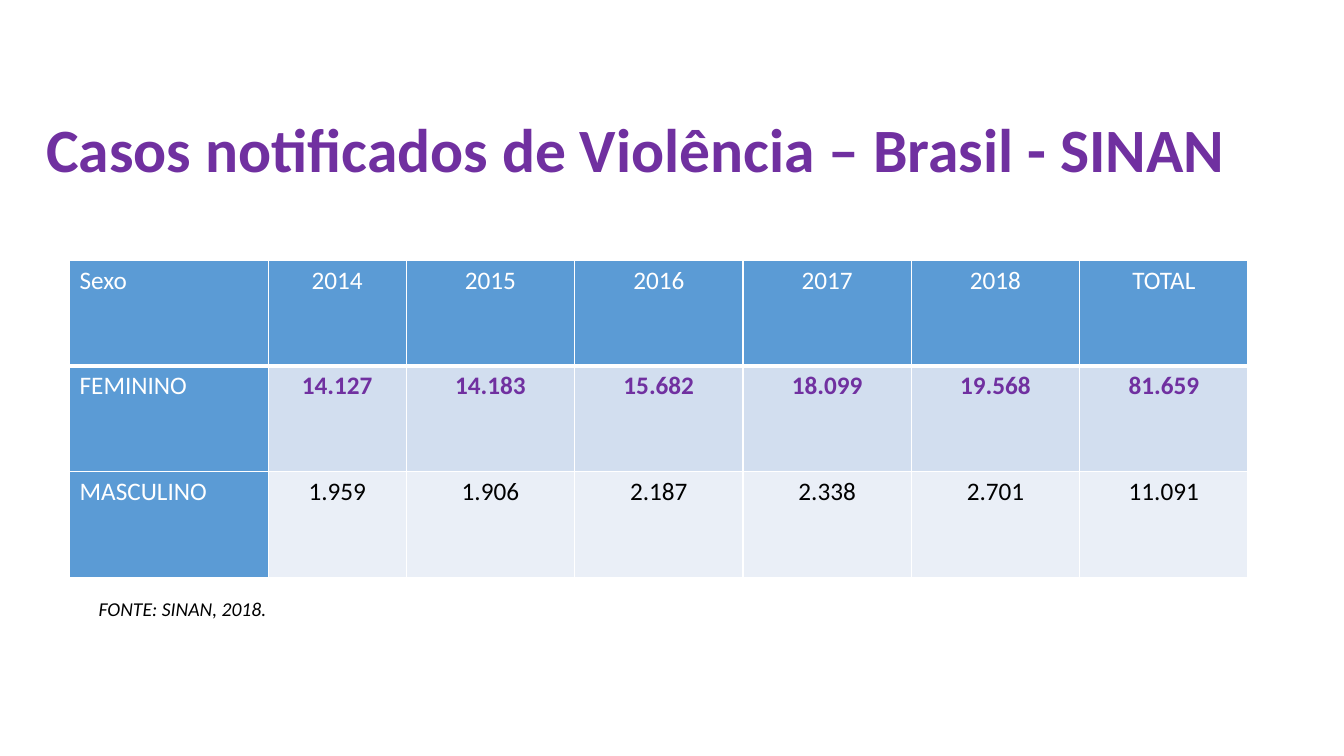
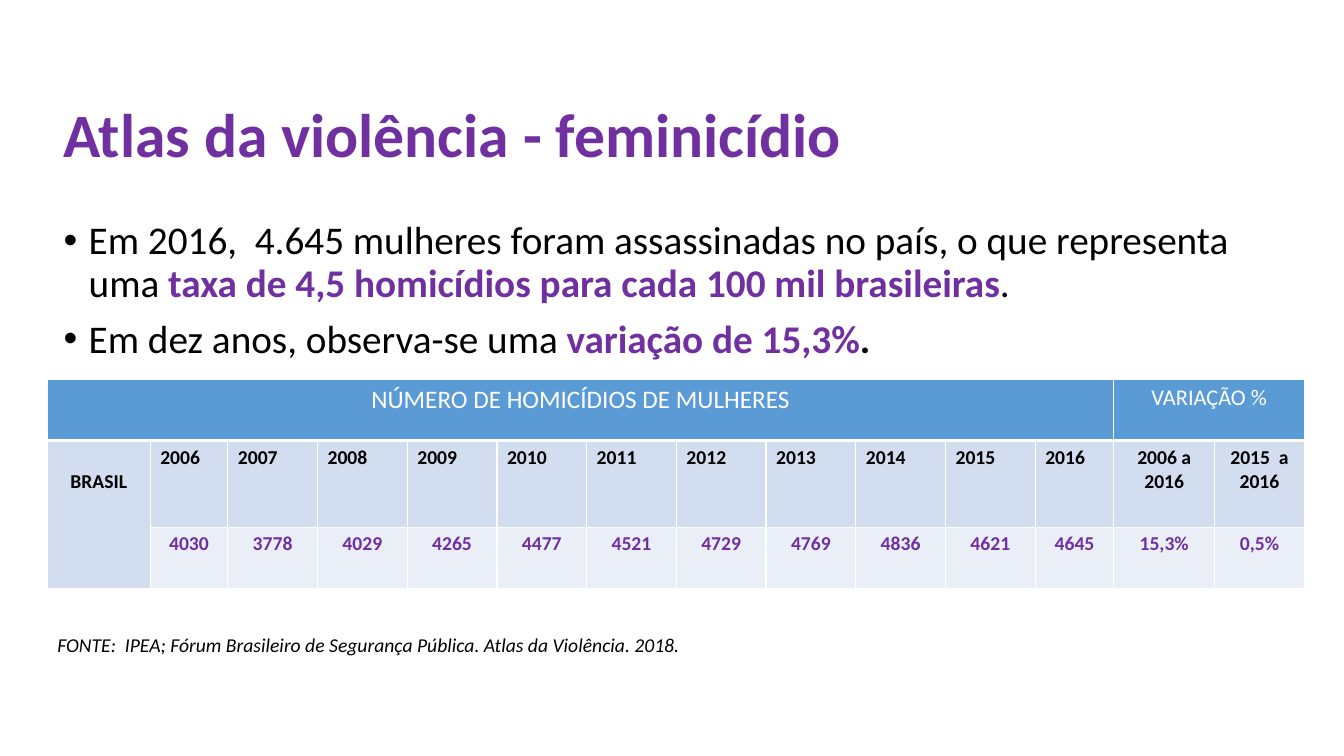
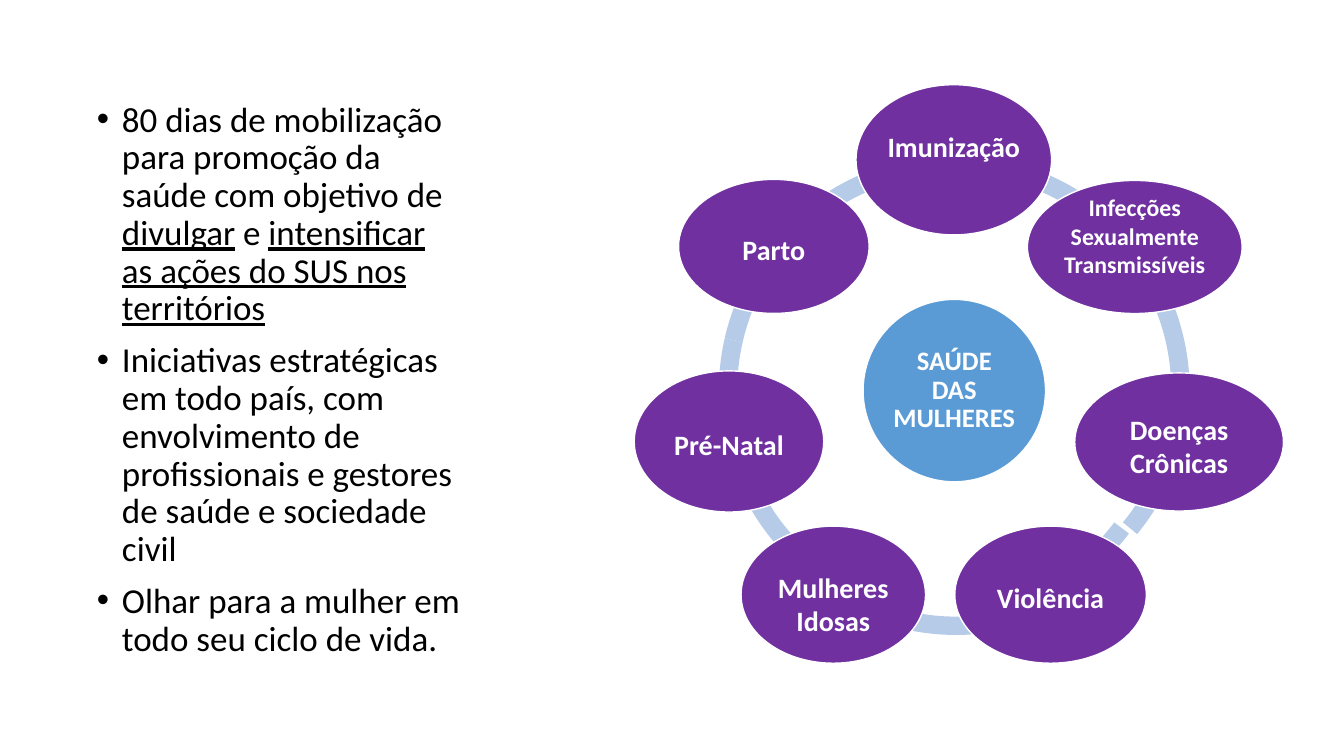
import pptx
import pptx.util
import pptx.dml.color
import pptx.enum.shapes
import pptx.enum.text
import pptx.oxml
import pptx.oxml.ns

RGBColor = pptx.dml.color.RGBColor
PURPLE = RGBColor(0x70, 0x30, 0xA0)
BLUE = RGBColor(0x5B, 0x9B, 0xD5)
ARC_BLUE = RGBColor(0xB5, 0xCB, 0xE7)
BAND_DARK = RGBColor(0xD2, 0xDE, 0xEF)
BAND_LIGHT = RGBColor(0xEA, 0xEF, 0xF7)
WHITE = RGBColor(0xFF, 0xFF, 0xFF)
BLACK = RGBColor(0x00, 0x00, 0x00)

FONT = "Calibri"
EMU_PER_PX = 9144
CONTENT_LAYOUT, TITLE_LAYOUT = 1, 5
LEFT = pptx.enum.text.PP_ALIGN.LEFT
CENTER = pptx.enum.text.PP_ALIGN.CENTER
JUSTIFY = pptx.enum.text.PP_ALIGN.JUSTIFY
TOP = pptx.enum.text.MSO_ANCHOR.TOP
MIDDLE = pptx.enum.text.MSO_ANCHOR.MIDDLE
SHAPES = pptx.enum.shapes.MSO_SHAPE

ARC_SIZE = 467
ARC_THICKNESS = 0.039
DEGREE = 0.6
ARCS = [
    (84, 70, 131.14, 162),
    (84, 70, 100.29, 131.14),
    (86, 79, 73.4, 101.68),
    (71, 71, 37.1, 70.9),
    (85, 64, 8.67, 39.44),
    (84, 70, 192.86, 7.71),
    (84, 70, 162, 192.86),
]
PETALS = [
    ("Imunização", (220, 0, 194, 149), 20, 0, 26),
    ("Infecções Sexualmente Transmissíveis", (390, 95, 213, 132), 17, 0, 22),
    ("Doenças Crônicas", (437, 286, 207, 137), 20, 8, 0),
    ("Violência", (318, 438, 190, 136), 20, 6, 0),
    ("Mulheres Idosas", (106, 438, 183, 136), 20, 18, 0),
    ("Pré-Natal", (0, 284, 188, 140), 20, 6, 0),
    ("Parto", (44, 94, 189, 133), 20, 6, 0),
]


def px(value):
    return pptx.util.Emu(value * EMU_PER_PX)


def place(shape, box):
    shape.left, shape.top, shape.width, shape.height = map(px, box)


def set_font(font, size, color, bold=False, italic=False):
    font.name = FONT
    font.size = pptx.util.Pt(size)
    font.color.rgb = color
    font.bold = bold
    font.italic = italic


def prepare_frame(frame):
    frame.word_wrap = True
    frame.auto_size = pptx.enum.text.MSO_AUTO_SIZE.NONE
    frame.vertical_anchor = TOP


def add_title(slide, box, text):
    title = slide.shapes.title
    place(title, box)
    prepare_frame(title.text_frame)
    title.text_frame.text = text
    paragraph = title.text_frame.paragraphs[0]
    paragraph.alignment = LEFT
    paragraph.line_spacing = 0.9
    set_font(paragraph.font, 44, PURPLE, bold=True)


def add_bullets(slide, box, size, items):
    body = slide.placeholders[1]
    place(body, box)
    frame = body.text_frame
    prepare_frame(frame)
    for index, runs in enumerate(items):
        paragraph = frame.add_paragraph() if index else frame.paragraphs[0]
        properties = paragraph._p.get_or_add_pPr()
        properties.set("marL", str(px(25)))
        properties.set("indent", str(px(-25)))
        paragraph.line_spacing = 0.9
        paragraph.space_before = pptx.util.Pt(10 if index else 0)
        set_font(paragraph.font, size, BLACK)
        for text, emphasis in runs:
            run = paragraph.add_run()
            run.text = text
            if "bold" in emphasis:
                run.font.bold = True
            if "purple" in emphasis:
                run.font.color.rgb = PURPLE
            if "underline" in emphasis:
                run.font.underline = True


def add_source(slide, box, text, alignment=LEFT):
    source = slide.shapes.add_textbox(*map(px, box))
    source.text_frame.word_wrap = True
    source.text_frame.text = text
    paragraph = source.text_frame.paragraphs[0]
    paragraph.alignment = alignment
    set_font(paragraph.font, 14, BLACK, italic=True)


def add_grid(slide, left, top, widths, heights):
    frame = slide.shapes.add_table(
        len(heights), len(widths), px(left), px(top), px(sum(widths)), px(sum(heights)))
    table = frame.table
    for column, width in zip(table.columns, widths):
        column.width = px(width)
    for row, height in zip(table.rows, heights):
        row.height = px(height)
    return table


def style_cell(cell, fill, bottom=1):
    properties = cell._tc.get_or_add_tcPr()
    for side, width in (("L", 1), ("R", 1), ("T", 1), ("B", bottom)):
        properties.append(pptx.oxml.parse_xml(
            f'<a:ln{side} {pptx.oxml.ns.nsdecls("a")} w="{pptx.util.Pt(width)}">'
            f'<a:solidFill><a:srgbClr val="{WHITE}"/></a:solidFill></a:ln{side}>'))
    cell.fill.solid()
    cell.fill.fore_color.rgb = fill


def write_cell(cell, text, size, color, bold=False, alignment=CENTER):
    cell.text = text
    paragraph = cell.text_frame.paragraphs[0]
    paragraph.alignment = alignment
    set_font(paragraph.font, size, color, bold)


def add_cases_table(slide, left, top):
    rows = [
        ("Sexo", "2014", "2015", "2016", "2017", "2018", "TOTAL"),
        ("FEMININO", "14.127", "14.183", "15.682", "18.099", "19.568", "81.659"),
        ("MASCULINO", "1.959", "1.906", "2.187", "2.338", "2.701", "11.091"),
    ]
    styles = [(BLUE, WHITE, False), (BAND_DARK, PURPLE, True), (BAND_LIGHT, BLACK, False)]
    table = add_grid(slide, left, top, [197, 137] + [167] * 5, [105] * 3)
    for row, (texts, (fill, color, bold)) in enumerate(zip(rows, styles)):
        for column, text in enumerate(texts):
            cell = table.cell(row, column)
            style_cell(cell, fill if column else BLUE, 1 if row else 3)
            if column:
                write_cell(cell, text, 18, color, bold)
            else:
                write_cell(cell, text, 18, WHITE, alignment=LEFT)


def add_homicides_table(slide, left, top):
    years = [str(year) for year in range(2006, 2017)]
    periods = ["2006 a 2016", "2015  a 2016"]
    values = ["4030", "3778", "4029", "4265", "4477", "4521", "4729", "4769",
              "4836", "4621", "4645", "15,3%", "0,5%"]
    widths = [102, 77] + [89] * 9 + [78, 100, 89]
    table = add_grid(slide, left, top, widths, [61, 86, 61])
    for row, fill in enumerate((BLUE, BAND_DARK, BAND_LIGHT)):
        for column in range(len(widths)):
            style_cell(table.cell(row, column), fill, 1 if row else 3)
    table.cell(0, 0).merge(table.cell(0, 11))
    table.cell(0, 12).merge(table.cell(0, 13))
    table.cell(1, 0).merge(table.cell(2, 0))
    write_cell(table.cell(0, 0), "NÚMERO DE HOMICÍDIOS DE MULHERES", 18, WHITE)
    write_cell(table.cell(0, 12), "VARIAÇÃO %", 16, WHITE)
    country = table.cell(1, 0)
    write_cell(country, "BRASIL", 14, BLACK, bold=True)
    country.margin_top = px(29)
    for column, (heading, value) in enumerate(zip(years + periods, values), start=1):
        alignment = CENTER if heading in periods else LEFT
        write_cell(table.cell(1, column), heading, 14, BLACK, True, alignment)
        write_cell(table.cell(2, column), value, 14, PURPLE, True)


def add_filled(slide, kind, box, fill):
    shape = slide.shapes.add_shape(kind, *map(px, box))
    shape.shadow.inherit = False
    shape.fill.solid()
    shape.fill.fore_color.rgb = fill
    shape.line.fill.background()
    return shape


def add_ellipse(slide, box, fill, text, size, insets, line_spacing=1.0):
    ellipse = add_filled(slide, SHAPES.OVAL, box, fill)
    ellipse.line.color.rgb = WHITE
    ellipse.line.width = pptx.util.Pt(1)
    frame = ellipse.text_frame
    prepare_frame(frame)
    frame.vertical_anchor = MIDDLE
    side, above, below = insets
    frame.margin_left = frame.margin_right = px(side)
    frame.margin_top, frame.margin_bottom = px(above), px(below)
    frame.text = text
    paragraph = frame.paragraphs[0]
    paragraph.alignment = CENTER
    paragraph.line_spacing = line_spacing
    set_font(paragraph.font, size, WHITE, bold=True)


def add_health_cycle(slide, left, top):
    for x, y, start, end in ARCS:
        arc = add_filled(slide, SHAPES.BLOCK_ARC,
                         (left + x, top + y, ARC_SIZE, ARC_SIZE), ARC_BLUE)
        arc.adjustments[0] = start * DEGREE
        arc.adjustments[1] = end * DEGREE
        arc.adjustments[2] = ARC_THICKNESS
    add_ellipse(slide, (left + 227, top + 213, 181, 181), BLUE,
                "SAÚDE DAS MULHERES", 19, (3, 3, 3), 0.9)
    for text, (x, y, width, height), size, above, below in PETALS:
        add_ellipse(slide, (left + x, top + y, width, height), PURPLE,
                    text, size, (0, above, below))


def add_slide(presentation, layout):
    return presentation.slides.add_slide(presentation.slide_layouts[layout])


def build_cases_slide(presentation):
    slide = add_slide(presentation, TITLE_LAYOUT)
    add_title(slide, (36, 113, 1232, 145), "Casos notificados de Violência – Brasil - SINAN")
    add_cases_table(slide, 69, 258)
    add_source(slide, (88, 587, 507, 34), "FONTE: SINAN, 2018.")


def build_atlas_slide(presentation):
    slide = add_slide(presentation, CONTENT_LAYOUT)
    add_title(slide, (53, 98, 1206, 111), "Atlas da violência - feminicídio")
    add_bullets(slide, (53, 214, 1206, 160), 28, [
        [("Em 2016,  4.645 mulheres foram assassinadas no país, o que representa uma ", ()),
         ("taxa de 4,5 homicídios para cada 100 mil brasileiras", ("bold", "purple")),
         (".", ())],
        [("Em dez anos, observa-se uma ", ()),
         ("variação de 15,3%", ("bold", "purple")),
         (".", ("bold",))],
    ])
    add_homicides_table(slide, 47, 376)
    add_source(slide, (47, 623, 1216, 34),
               "FONTE:  IPEA; Fórum Brasileiro de Segurança Pública. Atlas da Violência. 2018.",
               JUSTIFY)


def build_mobilization_slide(presentation):
    slide = add_slide(presentation, CONTENT_LAYOUT)
    title = slide.shapes.title.element
    title.getparent().remove(title)
    add_bullets(slide, (86, 96, 381, 570), 25, [
        [("80 dias de mobilização para promoção da saúde com objetivo de ", ()),
         ("divulgar", ("underline",)),
         (" e ", ()),
         ("intensificar as ações do SUS nos territórios", ("underline",))],
        [("Iniciativas estratégicas em todo país, com envolvimento de profissionais "
          "e gestores de saúde e sociedade civil", ())],
        [("Olhar para a mulher em todo seu ciclo de vida.", ())],
    ])
    add_health_cycle(slide, 629, 84)


def main():
    presentation = pptx.Presentation()
    presentation.slide_width = px(1333)
    presentation.slide_height = px(750)
    build_cases_slide(presentation)
    build_atlas_slide(presentation)
    build_mobilization_slide(presentation)
    presentation.save("out.pptx")


if __name__ == "__main__":
    main()
